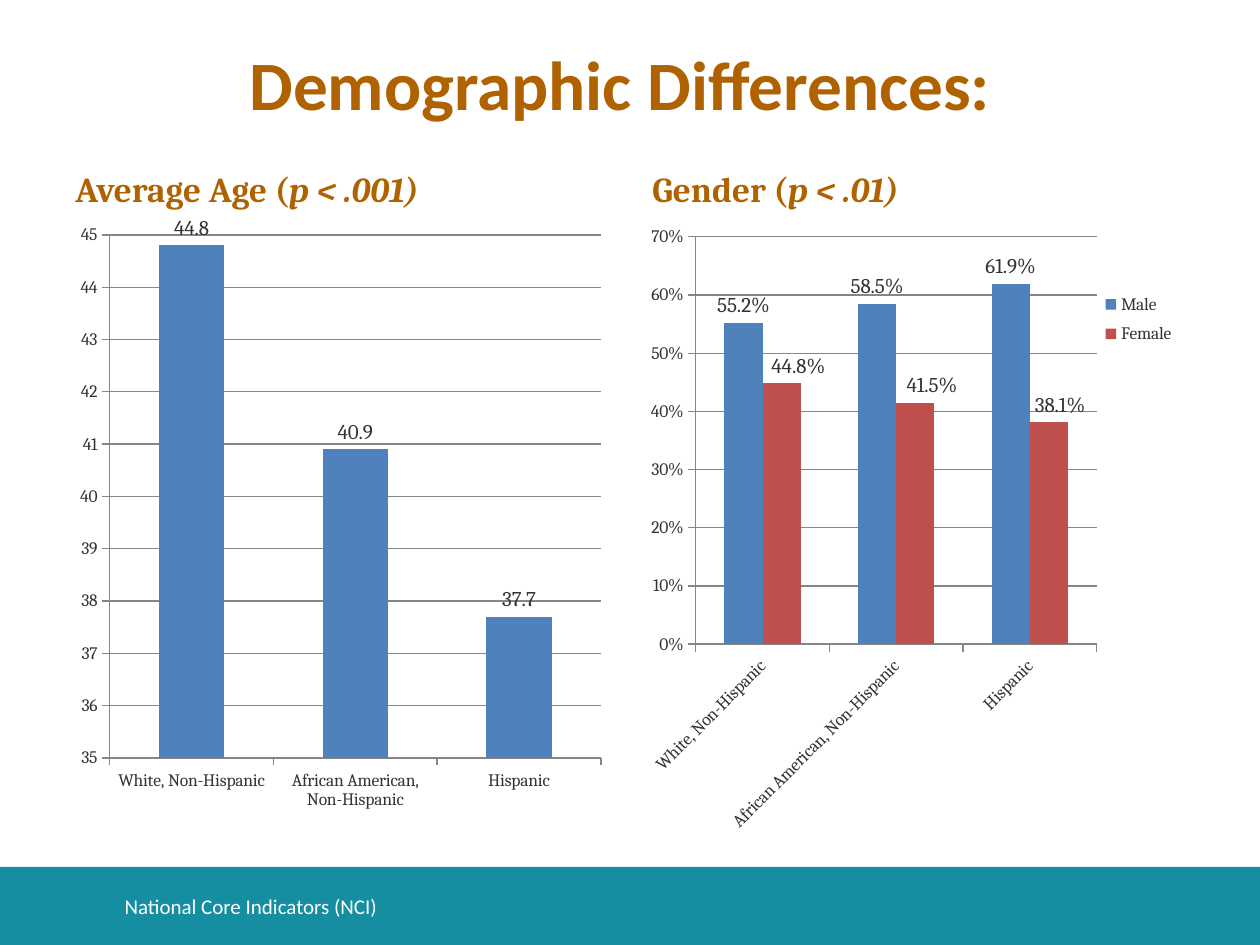
import pptx
import pptx.util
from lxml import etree
from pptx.chart.data import CategoryChartData
from pptx.dml.color import RGBColor
from pptx.enum.chart import XL_CHART_TYPE, XL_LABEL_POSITION, XL_LEGEND_POSITION, XL_TICK_MARK
from pptx.enum.shapes import MSO_SHAPE
from pptx.enum.text import MSO_ANCHOR, MSO_AUTO_SIZE, PP_ALIGN
from pptx.oxml.ns import qn

Inches, Pt = pptx.util.Inches, pptx.util.Pt

ORANGE = RGBColor(0xB0, 0x61, 0x00)
TEAL = RGBColor(0x16, 0x8E, 0xA2)
WHITE = RGBColor(0xFF, 0xFF, 0xFF)
DARK = RGBColor(0x33, 0x33, 0x33)
GRAY = RGBColor(0x86, 0x86, 0x86)
BLUE = RGBColor(0x4F, 0x81, 0xBD)
RED = RGBColor(0xC0, 0x50, 0x4D)

# Content
TITLE = "Demographic Differences:"
FOOTER = "National Core Indicators (NCI)"
GROUPS = ["White, Non-Hispanic", "African American, Non-Hispanic", "Hispanic"]
PANELS = [
    dict(heading=("Average Age (", "p < .001)"), left=0.5, top=1.01,
         series=[("Series 1", [44.8, 40.9, 37.7], BLUE, [])],
         scale=(35, 45, 1), axis_format="0", label_format="0.0",
         plot=(0.084, 0.031, 0.882, 0.832), legend=None, rotation=None),
    dict(heading=("Gender (", "p < .01)"), left=5.08, top=1.11,
         series=[("Male", [0.552, 0.585, 0.619], BLUE, []),
                 ("Female", [0.448, 0.415, 0.381], RED, [0.03, 0.03, 0.02])],
         scale=(0, 0.7, 0.1), axis_format="0%", label_format="0.0%",
         plot=(0.1, 0.034, 0.72, 0.648), legend=(0.8, 0.11, 0.19, 0.11), rotation=-45),
]
PANEL_WIDTH, CHART_TOP, CHART_HEIGHT = 4.42, 1.71, 4.99


def style(font, size, color, name, bold=False, italic=False):
    font.size, font.name, font.bold, font.italic = Pt(size), name, bold, italic
    font.color.rgb = color


def text_box(s, box, anchor):
    tf = s.shapes.add_textbox(*map(Inches, box)).text_frame
    tf.word_wrap = True
    tf.vertical_anchor = anchor
    return tf


def manual_layout(**settings):
    layout = etree.Element(qn("c:layout"))
    manual = etree.SubElement(layout, qn("c:manualLayout"))
    for tag, value in settings.items():
        etree.SubElement(manual, qn("c:" + tag)).set("val", str(value))
    return layout


def set_layout(parent, after, layout):
    for old in parent.findall(qn("c:layout")):
        parent.remove(old)
    position = 0 if after is None else parent.index(parent.find(qn(after))) + 1
    parent.insert(position, layout)


def area(box, **target):
    x, y, w, h = box
    return manual_layout(**target, xMode="edge", yMode="edge", x=x, y=y, w=w, h=h)


def style_axis(axis):
    axis.major_tick_mark = XL_TICK_MARK.OUTSIDE
    axis.minor_tick_mark = XL_TICK_MARK.NONE
    axis.format.line.color.rgb = GRAY
    style(axis.tick_labels.font, 10, DARK, "Cambria")


def add_labels(series, number_format, shifts):
    labels = series.data_labels
    labels.show_value = True
    labels.number_format = number_format
    labels.number_format_is_linked = False
    labels.position = XL_LABEL_POSITION.OUTSIDE_END
    style(labels.font, 12, DARK, "Cambria")
    # Labels moved sideways
    for i, shift in enumerate(shifts):
        label = series.points[i].data_label
        style(label.font, 12, DARK, "Cambria")
        label.position = XL_LABEL_POSITION.OUTSIDE_END
    for node, shift in zip(series._element.iter(qn("c:dLbl")), shifts):
        set_layout(node, "c:idx", manual_layout(x=shift, y=0))
        fmt = etree.Element(qn("c:numFmt"), formatCode=number_format, sourceLinked="0")
        node.insert(2, fmt)


def add_panel_chart(s, panel):
    data = CategoryChartData()
    data.categories = GROUPS
    for name, values, _, _ in panel["series"]:
        data.add_series(name, values)
    box = (panel["left"], CHART_TOP, PANEL_WIDTH, CHART_HEIGHT)
    chart = s.shapes.add_chart(XL_CHART_TYPE.COLUMN_CLUSTERED, *map(Inches, box), data).chart
    chart.has_title = False
    style(chart.font, 10, DARK, "Cambria")

    # Columns
    plot = chart.plots[0]
    plot.vary_by_categories = False
    plot.gap_width, plot.overlap = 150, 0
    for series, (_, _, color, shifts) in zip(plot.series, panel["series"]):
        series.format.fill.solid()
        series.format.fill.fore_color.rgb = color
        add_labels(series, panel["label_format"], shifts)

    # Axes
    value_axis, category_axis = chart.value_axis, chart.category_axis
    style_axis(value_axis)
    style_axis(category_axis)
    value_axis.minimum_scale, value_axis.maximum_scale, value_axis.major_unit = panel["scale"]
    value_axis.tick_labels.number_format = panel["axis_format"]
    value_axis.tick_labels.number_format_is_linked = False
    value_axis.has_major_gridlines = True
    value_axis.major_gridlines.format.line.color.rgb = GRAY
    if panel["rotation"]:
        body = category_axis._element.find(qn("c:txPr")).find(qn("a:bodyPr"))
        body.set("rot", str(panel["rotation"] * 60000))
        body.set("vert", "horz")

    # Plot area and legend
    plot_area = chart._chartSpace.find(".//" + qn("c:plotArea"))
    set_layout(plot_area, None, area(panel["plot"], layoutTarget="inner"))
    chart.has_legend = panel["legend"] is not None
    if chart.has_legend:
        chart.legend.position = XL_LEGEND_POSITION.RIGHT
        chart.legend.include_in_layout = False
        style(chart.legend.font, 10, DARK, "Cambria")
        set_layout(chart.legend._element, "c:legendPos", area(panel["legend"]))


def main():
    prs = pptx.Presentation()
    prs.slide_width, prs.slide_height = Inches(10), Inches(7.5)
    s = prs.slides.add_slide(prs.slide_layouts[5])

    # Footer band
    band = s.shapes.add_shape(MSO_SHAPE.RECTANGLE, *map(Inches, (0, 6.88, 10, 0.62)))
    band.shadow.inherit = False
    band.fill.solid()
    band.fill.fore_color.rgb = TEAL
    band.line.fill.background()
    tf = text_box(s, (0.89, 6.99, 7.4, 0.4), MSO_ANCHOR.MIDDLE)
    tf.text = FOOTER
    style(tf.paragraphs[0].runs[0].font, 12, WHITE, "Calibri")

    # Title
    title = s.shapes.title
    title.left, title.top, title.width, title.height = map(Inches, (0.42, 0.3, 9, 0.71))
    tf = title.text_frame
    tf.text = TITLE
    tf.auto_size = MSO_AUTO_SIZE.NONE
    tf.vertical_anchor = MSO_ANCHOR.MIDDLE
    tf.paragraphs[0].alignment = PP_ALIGN.CENTER
    style(tf.paragraphs[0].runs[0].font, 39.6, ORANGE, "Calibri", bold=True)

    # Headings and charts
    for panel in PANELS:
        box = (panel["left"], panel["top"], PANEL_WIDTH, CHART_TOP - panel["top"])
        p = text_box(s, box, MSO_ANCHOR.BOTTOM).paragraphs[0]
        for text, italic in zip(panel["heading"], (False, True)):
            r = p.add_run()
            r.text = text
            style(r.font, 20, ORANGE, "Cambria", bold=True, italic=italic)
        add_panel_chart(s, panel)

    prs.save("out.pptx")


if __name__ == "__main__":
    main()
